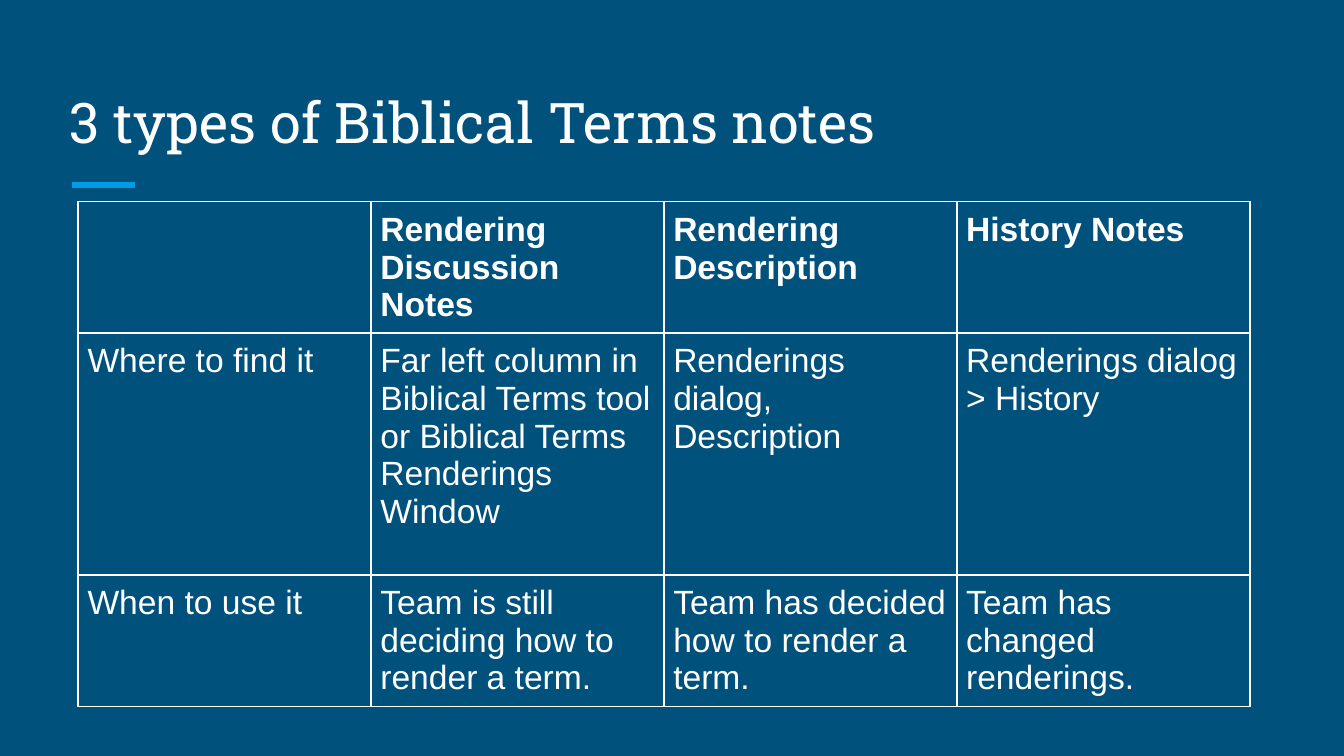
from lxml.etree import SubElement
from pptx import Presentation
from pptx.dml.color import RGBColor
from pptx.enum.shapes import MSO_CONNECTOR
from pptx.enum.text import MSO_ANCHOR
from pptx.oxml import parse_xml
from pptx.oxml.ns import nsdecls, qn
from pptx.util import Pt

TITLE = "3 types of Biblical Terms notes"
ROWS = [
    ["", "Rendering Discussion Notes", "Rendering Description", "History Notes"],
    ["Where to find it",
     "Far left column in Biblical Terms tool or Biblical Terms Renderings Window",
     "Renderings dialog, Description",
     "Renderings dialog > History"],
    ["When to use it",
     "Team is still deciding how to render a term.",
     "Team has decided how to render a term.",
     "Team has changed renderings."],
]
ROW_HEIGHTS = [70.5, 129.5, 70.5]
COLUMN_WIDTH = 156.9
CELL_INSET = Pt(5)
TITLE_INSET = Pt(7.2)

NAVY = RGBColor(0x00, 0x51, 0x7C)
SKY = RGBColor(0x03, 0x9B, 0xE5)
WHITE = RGBColor(0xFF, 0xFF, 0xFF)


def style_text(paragraph, font_name, size, bold=False):
    font = paragraph.font
    font.name, font.size, font.bold = font_name, Pt(size), bold
    font.color.rgb = WHITE


def set_insets(holder, inset):
    holder.margin_left = holder.margin_right = inset
    holder.margin_top = holder.margin_bottom = inset


def add_borders(cell):
    """Draw a 1 pt white line on all four sides; borders must precede the fill."""
    properties = cell._tc.get_or_add_tcPr()
    for position, side in enumerate(("lnL", "lnR", "lnT", "lnB")):
        properties.insert(position, parse_xml(
            f'<a:{side} {nsdecls("a")} w="{Pt(1)}"><a:solidFill>'
            f'<a:srgbClr val="{WHITE}"/></a:solidFill></a:{side}>'))


def add_title(page):
    box = page.shapes.add_textbox(Pt(30.2), Pt(36), Pt(659), Pt(54))
    frame = box.text_frame
    frame.word_wrap = True
    frame.vertical_anchor = MSO_ANCHOR.BOTTOM
    set_insets(frame, TITLE_INSET)
    frame.text = TITLE
    style_text(frame.paragraphs[0], "Roboto Slab", 30)


def add_accent(page):
    accent = page.shapes.add_connector(
        MSO_CONNECTOR.STRAIGHT, Pt(38.7), Pt(99.2), Pt(72.3), Pt(99.2))
    accent.line.color.rgb = SKY
    accent.line.width = Pt(3)
    SubElement(accent._element.spPr, qn("a:effectLst"))


def add_notes_table(page):
    columns = len(ROWS[0])
    table = page.shapes.add_table(
        len(ROWS), columns, Pt(41.9), Pt(108),
        Pt(COLUMN_WIDTH * columns), Pt(sum(ROW_HEIGHTS))).table
    table.horz_banding = False
    for column in table.columns:
        column.width = Pt(COLUMN_WIDTH)
    for row_index, (texts, height) in enumerate(zip(ROWS, ROW_HEIGHTS)):
        table.rows[row_index].height = Pt(height)
        for column_index, text in enumerate(texts):
            cell = table.cell(row_index, column_index)
            cell.text = text
            cell.fill.background()
            set_insets(cell, CELL_INSET)
            add_borders(cell)
            style_text(cell.text_frame.paragraphs[0], "Arial", 18, bold=row_index == 0)


def main():
    deck = Presentation()
    deck.slide_width, deck.slide_height = Pt(720), Pt(405)
    page = deck.slides.add_slide(deck.slide_layouts[6])
    page.background.fill.solid()
    page.background.fill.fore_color.rgb = NAVY
    add_accent(page)
    add_notes_table(page)
    add_title(page)
    deck.save("out.pptx")


if __name__ == "__main__":
    main()
